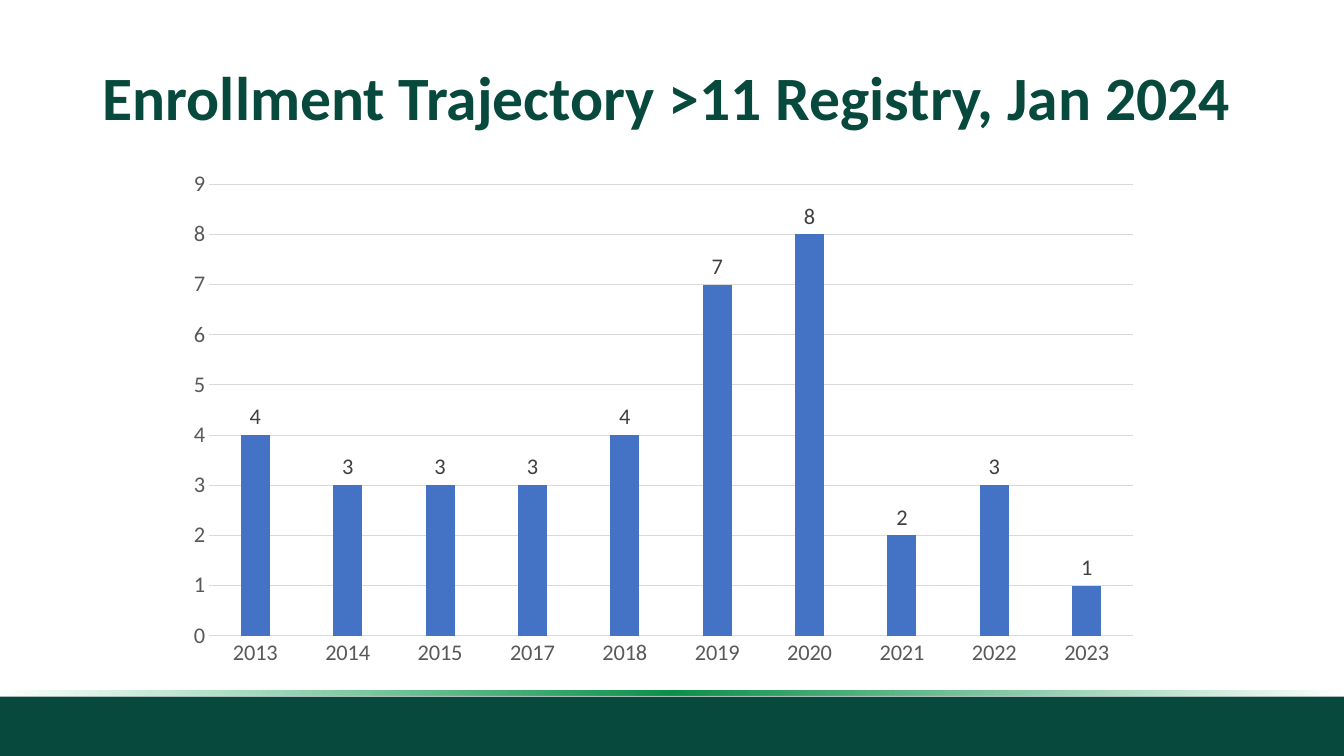
import pptx
import pptx.chart.data
import pptx.dml.color
import pptx.enum.chart
import pptx.enum.text
import pptx.oxml.ns
import pptx.util
from lxml import etree
from pptx.enum.shapes import MSO_SHAPE

Inches = pptx.util.Inches
Pt = pptx.util.Pt
RGBColor = pptx.dml.color.RGBColor
qn = pptx.oxml.ns.qn

PINE = RGBColor(0x07, 0x49, 0x3C)
BLUE = RGBColor(0x44, 0x72, 0xC4)
RULE = RGBColor(0xD9, 0xD9, 0xD9)
GREY = RGBColor(0x59, 0x59, 0x59)
DARK = RGBColor(0x40, 0x40, 0x40)
# Position in percent, colour, opacity in percent
GLOW = [
    (0, RGBColor(0x0D, 0x9D, 0x4F), 0),
    (50, RGBColor(0x0C, 0x90, 0x49), 100),
    (100, RGBColor(0x0F, 0xAB, 0x56), 0),
]
FONT = "Calibri"
YEARS = ["2013", "2014", "2015", "2017", "2018",
         "2019", "2020", "2021", "2022", "2023"]
COUNTS = [4, 3, 3, 3, 4, 7, 8, 2, 3, 1]


def style(font, size, color, bold=False):
    font.name = FONT
    font.size = Pt(size)
    font.bold = bold
    font.color.rgb = color


def add_bar(slide, left, top, width, height):
    bar = slide.shapes.add_shape(
        MSO_SHAPE.RECTANGLE, Inches(left), Inches(top),
        Inches(width), Inches(height))
    bar.shadow.inherit = False
    bar.line.fill.background()
    return bar


def fade(bar):
    """Fill the bar with the green glow that clears towards both ends."""
    bar.fill.gradient()
    bar.fill.gradient_angle = 180
    stops = bar._element.spPr.find(".//" + qn("a:gsLst"))
    for stop in list(stops):
        stops.remove(stop)
    for place, color, alpha in GLOW:
        stop = etree.SubElement(stops, qn("a:gs"), pos=str(place * 1000))
        tint = etree.SubElement(stop, qn("a:srgbClr"), val=str(color))
        etree.SubElement(tint, qn("a:alpha"), val=str(alpha * 1000))


def add_footer(slide, left, top, width, height):
    edge = 0.06
    band = add_bar(slide, left, top + edge, width, height - edge)
    band.fill.solid()
    band.fill.fore_color.rgb = PINE
    fade(add_bar(slide, left, top, width, 0.05))


def add_title(slide, left, top, width, height):
    box = slide.shapes.add_textbox(
        Inches(left), Inches(top), Inches(width), Inches(height))
    frame = box.text_frame
    frame.word_wrap = True
    frame.vertical_anchor = pptx.enum.text.MSO_ANCHOR.MIDDLE
    frame.text = "Enrollment Trajectory >11 Registry, Jan 2024"
    line = frame.paragraphs[0]
    line.line_spacing = 0.9
    style(line.runs[0].font, 44, PINE, True)


def add_plot(slide, left, top, width, height):
    data = pptx.chart.data.CategoryChartData()
    data.categories = YEARS
    data.add_series("Series 1", COUNTS)
    chart = slide.shapes.add_chart(
        pptx.enum.chart.XL_CHART_TYPE.COLUMN_CLUSTERED, Inches(left),
        Inches(top), Inches(width), Inches(height), data).chart
    chart.has_title = False
    chart.has_legend = False
    style(chart.font, 16, GREY)

    years, scale = chart.category_axis, chart.value_axis
    for axis in (years, scale):
        axis.major_tick_mark = pptx.enum.chart.XL_TICK_MARK.NONE
        style(axis.tick_labels.font, 16, GREY)
    scale.minimum_scale = 0
    scale.maximum_scale = 9
    scale.major_unit = 1
    scale.format.line.fill.background()
    for line in (years.format.line, scale.major_gridlines.format.line):
        line.color.rgb = RULE
        line.width = Pt(0.75)

    plot = chart.plots[0]
    plot.vary_by_categories = False
    plot.gap_width = 219
    plot.overlap = -27
    series = plot.series[0]
    series.format.fill.solid()
    series.format.fill.fore_color.rgb = BLUE
    labels = series.data_labels
    labels.show_value = True
    labels.position = pptx.enum.chart.XL_LABEL_POSITION.OUTSIDE_END
    style(labels.font, 16, DARK)


def main():
    deck = pptx.Presentation()
    deck.slide_width = Inches(13.33)
    deck.slide_height = Inches(7.5)
    slide = deck.slides.add_slide(deck.slide_layouts[6])
    add_footer(slide, 0, 6.85, 13.33, 0.65)
    add_title(slide, 0.92, 0.4, 11.5, 1.19)
    add_plot(slide, 1.73, 1.59, 9.7, 5.13)
    deck.save("out.pptx")


if __name__ == "__main__":
    main()
